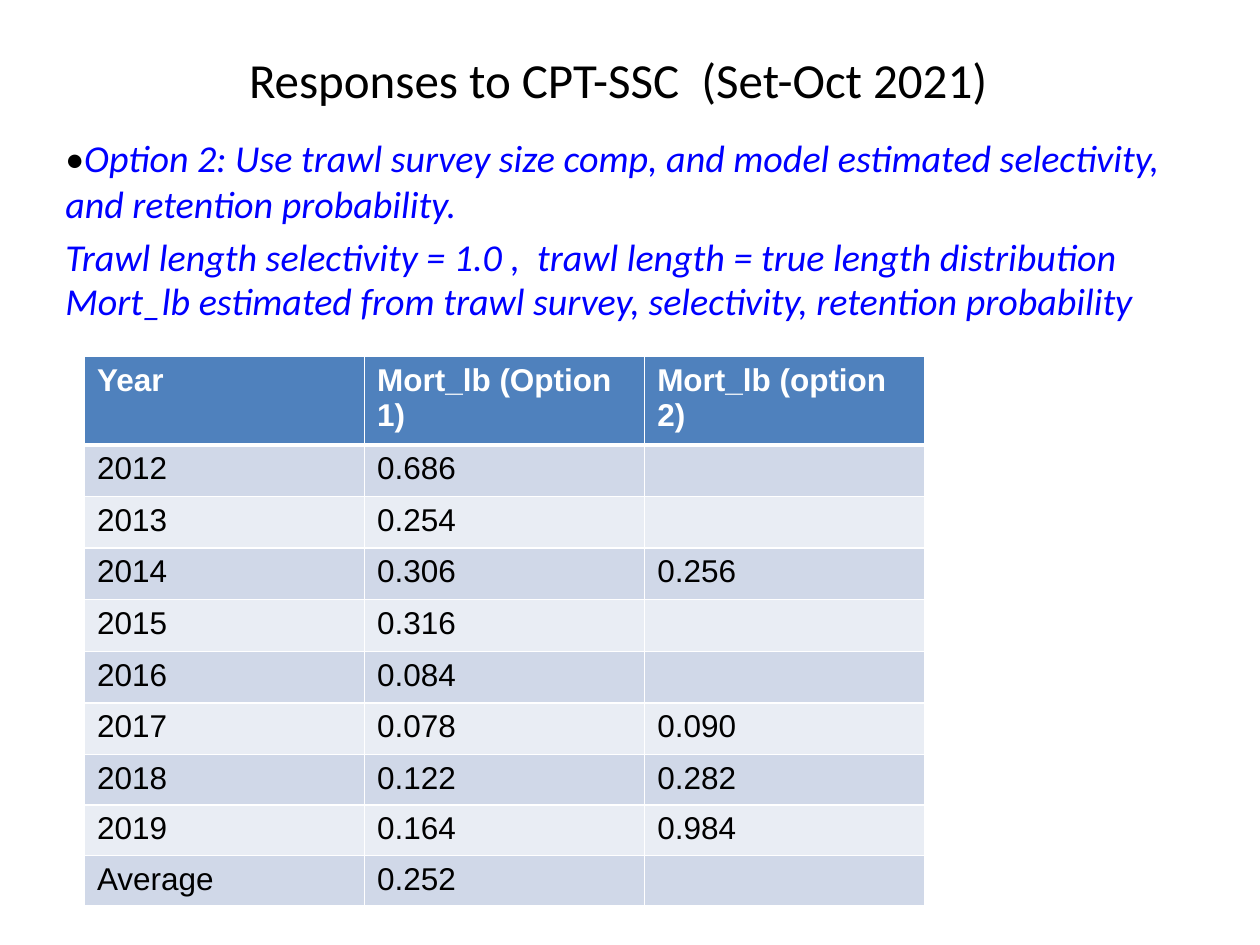
from pptx import Presentation
from pptx.dml.color import RGBColor
from pptx.enum.text import MSO_ANCHOR, PP_ALIGN
from pptx.oxml import parse_xml
from pptx.oxml.ns import nsdecls
from pptx.util import Inches, Pt

LEFT, CENTER = PP_ALIGN.LEFT, PP_ALIGN.CENTER
TOP, MIDDLE = MSO_ANCHOR.TOP, MSO_ANCHOR.MIDDLE
BLACK, WHITE, BLUE = "000000", "FFFFFF", "0000FF"
HEADER_FILL = "4F81BD"
BAND_FILLS = ["D0D8E8", "E9EDF4"]
BODY_SIZE = 21.7


def color(value):
    return RGBColor.from_string(value)


def write(paragraph, text, size=BODY_SIZE, font="Calibri", fill=BLACK,
          bold=False, italic=False, align=LEFT, before=0):
    paragraph.alignment = align
    paragraph.space_before = Pt(before)
    run = paragraph.add_run()
    run.text = text
    run.font.size = Pt(size)
    run.font.name = font
    run.font.bold = bold
    run.font.italic = italic
    run.font.color.rgb = color(fill)


prs = Presentation()
prs.slide_width, prs.slide_height = Inches(10), Inches(7.5)
slide = prs.slides.add_slide(prs.slide_layouts[6])

frames = []
for left, top, width, height, anchor in [
    (0.25, 0.25, 9.31, 0.75, MIDDLE),
    (0.42, 1.02, 9.14, 1.08, TOP),
    (0.42, 2.15, 8.92, 0.62, TOP),
]:
    box = slide.shapes.add_textbox(Inches(left), Inches(top), Inches(width), Inches(height))
    box.text_frame.word_wrap = True
    box.text_frame.vertical_anchor = anchor
    frames.append(box.text_frame)
title, option, method = frames

write(title.paragraphs[0], "Responses to CPT-SSC  (Set-Oct 2021)", size=28, align=CENTER)
write(option.paragraphs[0], "•")
write(option.paragraphs[0],
      "Option 2: Use trawl survey size comp, and model estimated selectivity, "
      "and retention probability.", fill=BLUE, italic=True)
write(option.add_paragraph(),
      "Trawl length selectivity = 1.0 ,  trawl length = true length distribution",
      fill=BLUE, italic=True, before=4.3)
write(method.paragraphs[0],
      "Mort_lb estimated from trawl survey, selectivity, retention probability",
      fill=BLUE, italic=True)

mortality = [
    ("Year", "Mort_lb (Option 1)", "Mort_lb (option 2)"),
    ("2012", "0.686", ""),
    ("2013", "0.254", ""),
    ("2014", "0.306", "0.256"),
    ("2015", "0.316", ""),
    ("2016", "0.084", ""),
    ("2017", "0.078", "0.090"),
    ("2018", "0.122", "0.282"),
    ("2019", "0.164", "0.984"),
    ("Average", "0.252", ""),
]
row_heights = [0.65] + [0.41] * 6 + [0.38, 0.38, 0.4]
table = slide.shapes.add_table(
    len(mortality), 3, Inches(0.67), Inches(2.83), Inches(6.67), Inches(sum(row_heights))
).table
for column in table.columns:
    column.width = Inches(6.67 / 3)

for r, values in enumerate(mortality):
    table.rows[r].height = Inches(row_heights[r])
    header = r == 0
    for c, value in enumerate(values):
        cell = table.cell(r, c)
        for side in "LRTB":
            thick = (side == "B" and header) or (side == "T" and r == 1)
            cell._tc.get_or_add_tcPr().append(parse_xml(
                f'<a:ln{side} {nsdecls("a")} w="{Pt(3 if thick else 1)}"><a:solidFill>'
                f'<a:srgbClr val="{WHITE}"/></a:solidFill></a:ln{side}>'))
        cell.fill.solid()
        cell.fill.fore_color.rgb = color(HEADER_FILL if header else BAND_FILLS[(r - 1) % 2])
        if value:
            write(cell.text_frame.paragraphs[0], value, size=18, font="Arial",
                  fill=WHITE if header else BLACK, bold=header)

prs.save("out.pptx")
